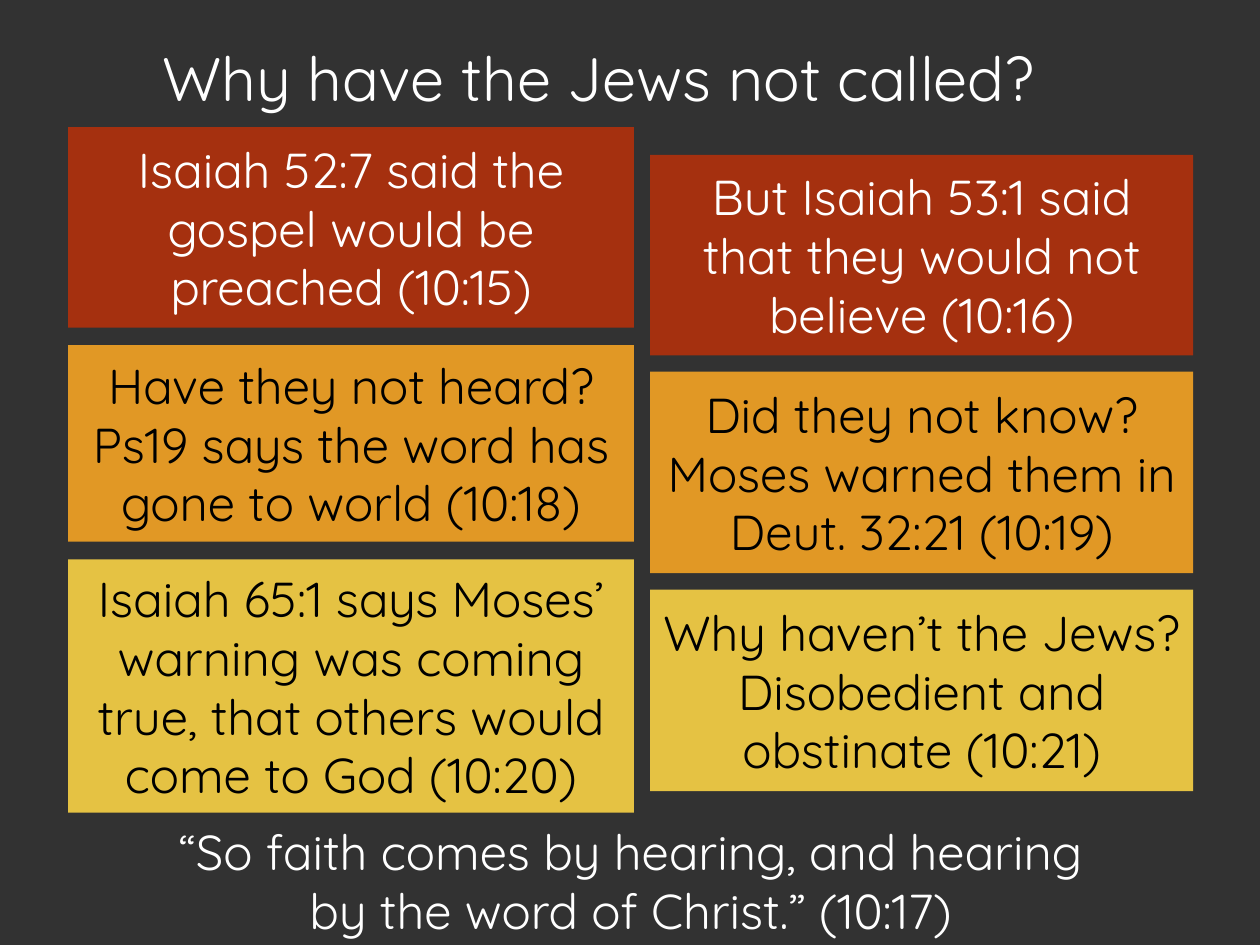
from pptx import Presentation
from pptx.dml.color import RGBColor
from pptx.enum.shapes import MSO_SHAPE as SHAPE
from pptx.enum.text import MSO_ANCHOR as ANCHOR, PP_ALIGN as ALIGN
from pptx.util import Inches, Pt

FONT = "Quicksand"
WHITE, BLACK, DARK = "FFFFFF", "000000", "323232"
RED, ORANGE, YELLOW = "A5300F", "E19825", "E5C243"

# Each card: height, fill, text colour, text
LEFT_CARDS = [
    (1.59, RED, WHITE, "Isaiah 52:7 said the gospel would be preached (10:15)"),
    (1.56, ORANGE, BLACK, "Have they not heard? Ps19 says the word has gone to world (10:18)"),
    (2.01, YELLOW, BLACK,
     "Isaiah 65:1 says Moses’ warning was coming true, that others would come to God (10:20)"),
]
RIGHT_CARDS = [
    (1.59, RED, WHITE, "But Isaiah 53:1 said that they would not believe (10:16)"),
    (1.6, ORANGE, BLACK, "Did they not know? Moses warned them in Deut. 32:21 (10:19)"),
    (1.6, YELLOW, BLACK, "Why haven’t the Jews? Disobedient and obstinate (10:21)"),
]


def rgb(value):
    return RGBColor.from_string(value)


def set_text(sp, text, size=28, color=WHITE, align=ALIGN.CENTER,
             anchor=ANCHOR.TOP, after=0):
    tf = sp.text_frame
    tf.word_wrap = True
    tf.vertical_anchor = anchor
    p = tf.paragraphs[0]
    p.alignment = align
    p.space_after = Pt(after)
    r = p.add_run()
    r.text = text
    r.font.name = FONT
    r.font.size = Pt(size)
    r.font.color.rgb = rgb(color)


def add_line(s, box, text, **fmt):
    sp = s.shapes.add_textbox(*map(Inches, box))
    set_text(sp, text, after=12, **fmt)


def add_card_column(s, left, top, width, gap, cards):
    """Stack cards downwards, with an equal gap between them."""
    for height, fill, color, text in cards:
        sp = s.shapes.add_shape(SHAPE.RECTANGLE, *map(Inches, (left, top, width, height)))
        sp.shadow.inherit = False
        sp.fill.solid()
        sp.fill.fore_color.rgb = rgb(fill)
        sp.line.fill.background()
        set_text(sp, text, color=color, anchor=ANCHOR.MIDDLE)
        top += height + gap


def main():
    prs = Presentation()
    prs.slide_width, prs.slide_height = Inches(10), Inches(7.5)
    s = prs.slides.add_slide(prs.slide_layouts[6])
    s.background.fill.solid()
    s.background.fill.fore_color.rgb = rgb(DARK)

    # Title
    add_line(s, (1.19, 0.27, 7.63, 0.86), "Why have the Jews not called?",
             size=35, align=ALIGN.LEFT)
    # Two columns of cards
    add_card_column(s, 0.54, 1.01, 4.49, 0.14, LEFT_CARDS)
    add_card_column(s, 5.16, 1.23, 4.31, 0.13, RIGHT_CARDS)
    # Closing verse
    add_line(s, (1.19, 6.47, 7.63, 1.01),
             "“So faith comes by hearing, and hearing by the word of Christ.” (10:17)")

    prs.save("out.pptx")


if __name__ == "__main__":
    main()
